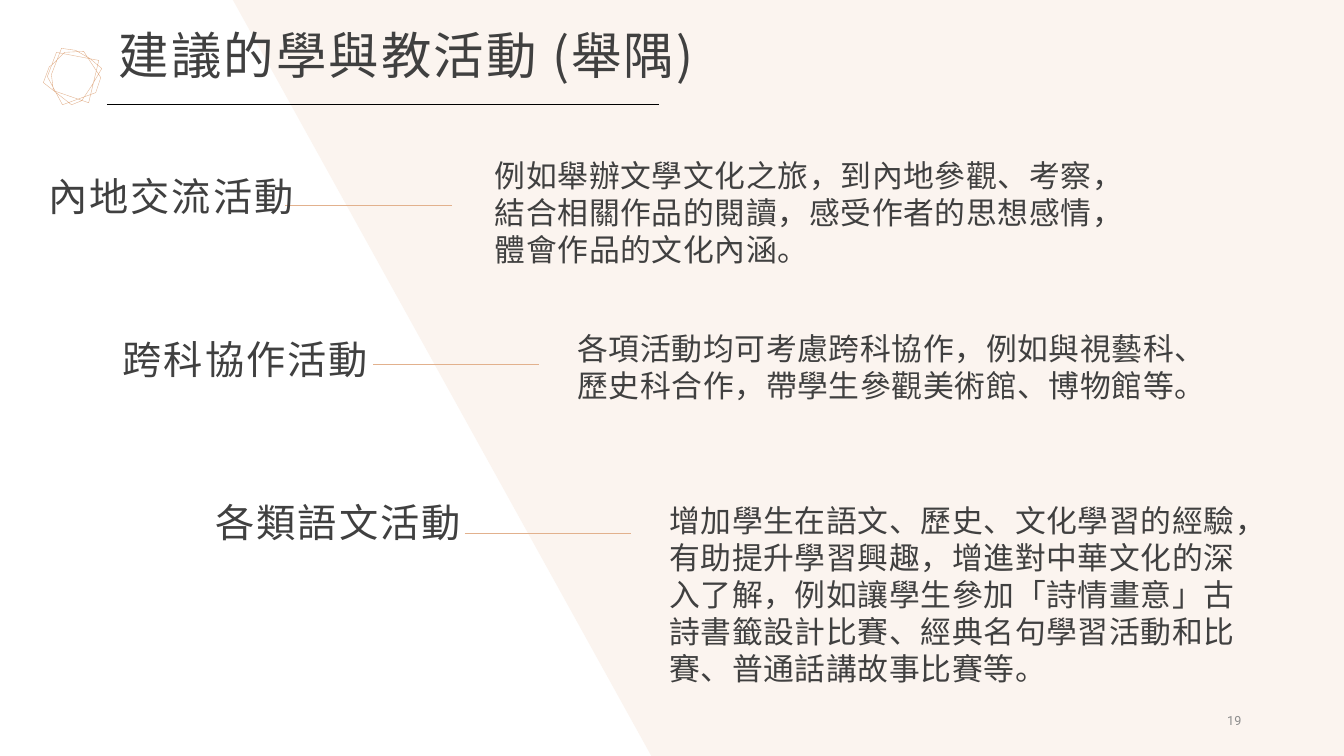
from lxml import etree
from pptx import Presentation
from pptx.dml.color import RGBColor
from pptx.enum.text import MSO_ANCHOR, PP_ALIGN
from pptx.oxml.ns import qn
from pptx.util import Inches, Pt

WIDE, HIGH = 13.33, 7.5
CREAM = RGBColor(0xFB, 0xF4, 0xEF)
PEACH = RGBColor(0xE2, 0xB1, 0x8D)
DARK = RGBColor(0x40, 0x40, 0x40)
GREY = RGBColor(0x8C, 0x8C, 0x8C)
BLACK = RGBColor(0, 0, 0)
SANS, LATIN = "Noto Sans CJK SC", "Roboto"
LEFT, RIGHT = PP_ALIGN.LEFT, PP_ALIGN.RIGHT
TOP, MIDDLE = MSO_ANCHOR.TOP, MSO_ANCHOR.MIDDLE

# Each row: heading box, start of rule, body box, heading, body
ROWS = [
    ((0.16, 1.69, 2.85, 0.56), (2.83, 2.04), (4.81, 1.51, 6.36, 1.11),
     "內地交流活動",
     "例如舉辦文學文化之旅，到內地參觀、考察，結合相關作品的閱讀，"
     "感受作者的思想感情，體會作品的文化內涵。"),
    ((1.01, 3.31, 2.74, 0.56), (3.7, 3.61), (5.63, 3.22, 6.36, 1.11),
     "跨科協作活動",
     "各項活動均可考慮跨科協作，例如與視藝科、歷史科合作，"
     "帶學生參觀美術館、博物館等。"),
    ((1.93, 4.93, 2.74, 0.56), (4.61, 5.29), (6.54, 4.93, 6.06, 1.11),
     "各類語文活動",
     "增加學生在語文、歷史、文化學習的經驗，有助提升學習興趣，"
     "增進對中華文化的深入了解，例如讓學生參加「詩情畫意」古詩書籤設計比賽、"
     "經典名句學習活動和比賽、普通話講故事比賽等。"),
]
RULE = 1.65

# Corners of the ornament as hundredths of an inch from its box
KNOT = [(21, 4), (8, 17), (6, 18), (0, 34), (28, 56), (38, 52), (48, 37),
        (58, 20), (46, 10), (32, 2), (18, 0), (8, 26), (10, 42), (45, 54),
        (55, 12), (13, 4), (4, 28), (19, 56), (52, 44), (57, 29), (40, 3)]


def add_text(slide, box, text, size, color=DARK, face=SANS, align=LEFT,
             anchor=TOP, lead=1.0, before=0, gap=0):
    frame = slide.shapes.add_textbox(*map(Inches, box)).text_frame
    frame.word_wrap = True
    frame.vertical_anchor = anchor
    para = frame.paragraphs[0]
    para.text = text
    para.alignment = align
    para.line_spacing = lead
    para.space_before = Pt(before)
    font = para.font
    font.size, font.name = Pt(size), face
    font.color.rgb = color
    # East Asian face and letter spacing
    props = para._p.pPr.find(qn("a:defRPr"))
    props.set("spc", str(int(gap * 100)))
    etree.SubElement(props, qn("a:ea")).set("typeface", face)


def add_rule(slide, left, top, width, color):
    ends = map(Inches, (left, top, left + width, top))
    rule = slide.shapes.add_connector(1, *ends)
    rule.line.color.rgb = color
    rule.line.width = Pt(0.5)
    etree.SubElement(rule._element.spPr, qn("a:effectLst"))


def add_free(slide, points):
    first, *rest = [(Inches(x), Inches(y)) for x, y in points]
    pen = slide.shapes.build_freeform(*first)
    pen.add_line_segments(rest, close=True)
    shape = pen.convert_to_shape()
    shape.shadow.inherit = False
    return shape


def add_back(slide):
    panel = add_free(slide, [(6.46, HIGH), (2.31, 0), (WIDE, 0), (WIDE, HIGH)])
    panel.fill.solid()
    panel.fill.fore_color.rgb = CREAM
    panel.line.fill.background()


def add_head(slide, box):
    left, top, width, height = box
    add_text(slide, box, "建議的學與教活動 (舉隅)", 36, anchor=MIDDLE,
             lead=0.9, gap=1.5)
    add_rule(slide, left - 0.02, top + 1.04, 5.48, BLACK)
    knot = add_free(slide, [(left - 0.65 + x / 100, top + 0.48 + y / 100)
                            for x, y in KNOT])
    knot.fill.background()
    knot.line.color.rgb = PEACH
    knot.line.width = Pt(0.25)


def add_row(slide, head, start, body, title, text):
    add_rule(slide, *start, RULE, PEACH)
    add_text(slide, head, title, 28, align=RIGHT, anchor=MIDDLE,
             lead=0.9, before=10, gap=1.5)
    add_text(slide, body, text, 22, before=10, gap=0.5)


def main():
    deck = Presentation()
    deck.slide_width, deck.slide_height = Inches(WIDE), Inches(HIGH)
    slide = deck.slides.add_slide(deck.slide_layouts[6])
    add_back(slide)
    for row in ROWS:
        add_row(slide, *row)
    # Page number
    add_text(slide, (11.82, 6.95, 0.59, 0.4), "19", 9, GREY, LATIN,
             RIGHT, MIDDLE)
    add_head(slide, (1.08, 0, 6.36, 1.16))
    deck.save("out.pptx")


if __name__ == "__main__":
    main()
